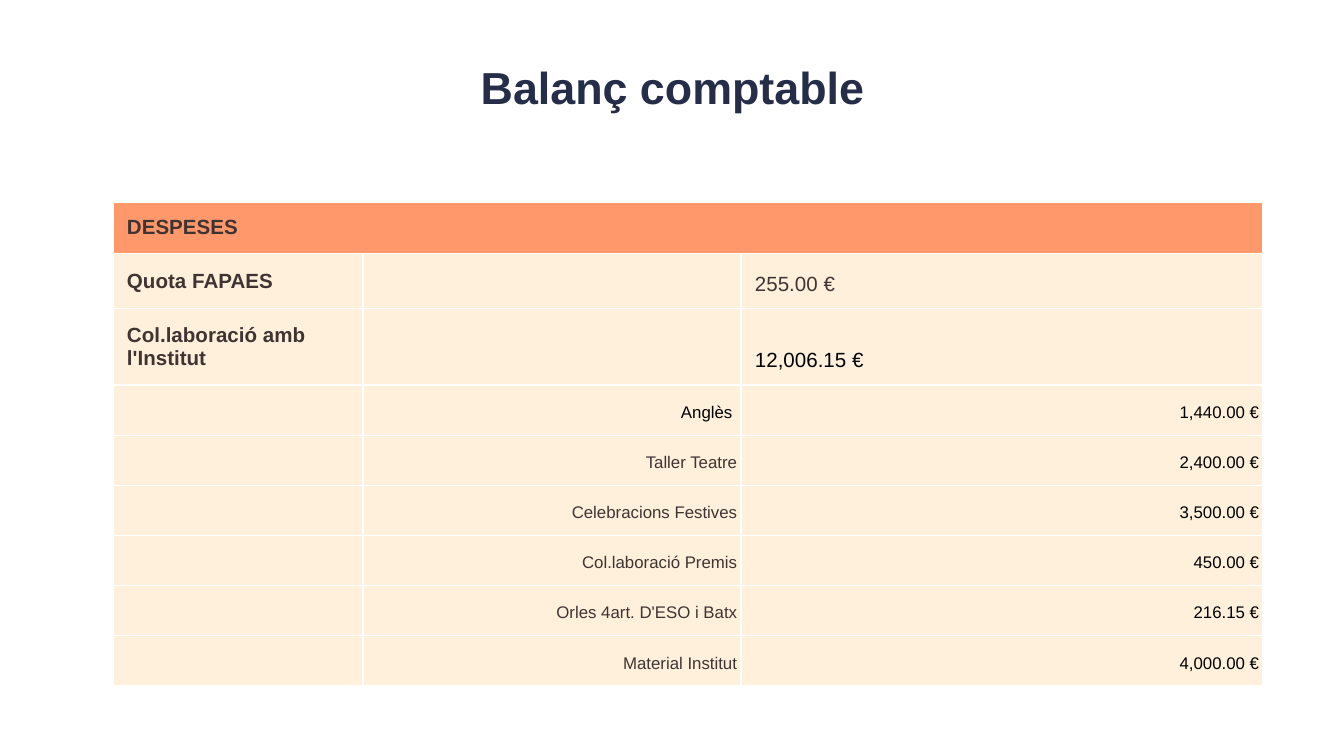
from lxml import etree
from pptx import Presentation
from pptx import util as u
from pptx.dml.color import RGBColor
from pptx.enum import text as t
from pptx.oxml import ns

PX = 914400 / 134.4
NAVY = RGBColor(0x25, 0x2D, 0x48)
BROWN = RGBColor(0x40, 0x34, 0x33)
BLACK = RGBColor(0, 0, 0)
CORAL = RGBColor(0xFF, 0x99, 0x6C)
CREAM = RGBColor(0xFF, 0xF0, 0xDB)
WHITE = RGBColor(0xFF, 0xFF, 0xFF)
LEFT, MID, RIGHT = t.PP_ALIGN.LEFT, t.PP_ALIGN.CENTER, t.PP_ALIGN.RIGHT
CENTRE, LOW = t.MSO_ANCHOR.MIDDLE, t.MSO_ANCHOR.BOTTOM


def px(n):
    return u.Emu(round(n * PX))


class Deck:
    """Holds the style and the current slide."""

    def __init__(self, wide, high, face):
        self.prs = Presentation()
        self.prs.slide_width, self.prs.slide_height = px(wide), px(high)
        self.face = face
        self.slide = self.prs.slides.add_slide(self.prs.slide_layouts[6])

    def label(self, para, words, size, color, bold=False, align=LEFT, gap=1.0):
        para.alignment, para.line_spacing = align, gap
        if not words:
            para._p.get_or_add_endParaRPr().set("sz", str(size * 100))
            return
        run = para.add_run()
        run.text = words
        style = {"name": self.face, "size": u.Pt(size), "bold": bold}
        for key, value in style.items():
            setattr(run.font, key, value)
        run.font.color.rgb = color

    def title(self, words, x, y, w, h):
        frame = self.slide.shapes.add_textbox(px(x), px(y), px(w), px(h)).text_frame
        frame.word_wrap = True
        for side in ("left", "right", "top", "bottom"):
            setattr(frame, "margin_" + side, u.Inches(0.1))
        self.label(frame.paragraphs[0], words, 24, NAVY, True, MID)

    def table(self, x, y, cols, rows):
        shape = self.slide.shapes.add_table(
            len(rows), len(cols), px(x), px(y), px(sum(cols)), px(sum(rows)))
        grid = shape.table
        grid.first_row = grid.horz_banding = False
        for col, wide in zip(grid.columns, cols):
            col.width = px(wide)
        for row, high in zip(grid.rows, rows):
            row.height = px(high)
        return grid

    def cell(self, cell, fill, words="", size=9, color=BROWN, anchor=CENTRE,
             indent=0, **style):
        form = {"margin_left": px(4), "margin_right": px(4),
                "margin_top": u.Inches(0.1), "margin_bottom": u.Inches(0.1),
                "vertical_anchor": anchor}
        for key, value in form.items():
            setattr(cell, key, value)
        self.edge(cell)
        cell.fill.solid()
        cell.fill.fore_color.rgb = fill
        para = cell.text_frame.paragraphs[0]
        self.label(para, words, size, color, **style)
        if indent:
            para._p.get_or_add_pPr().set("marL", str(px(indent)))

    def edge(self, cell):
        props = cell._tc.get_or_add_tcPr()
        for side in "LRTB":
            line = etree.SubElement(props, ns.qn("a:ln" + side), w=str(u.Pt(0.75)))
            fill = etree.SubElement(line, ns.qn("a:solidFill"))
            etree.SubElement(fill, ns.qn("a:srgbClr"), val=str(WHITE))


def main():
    deck = Deck(1344, 756, "Arial")
    deck.title("Balanç comptable", 27, 46, 1291, 85)
    totals = [("Quota FAPAES", "255.00 €", BROWN, 1.15),
              ("Col.laboració amb l'Institut", "12,006.15 €", BLACK, 1.0)]
    items = [("Anglès ", "1,440.00 €"), ("Taller Teatre", "2,400.00 €"),
             ("Celebracions Festives", "3,500.00 €"),
             ("Col.laboració Premis", "450.00 €"),
             ("Orles 4art. D'ESO i Batx", "216.15 €"),
             ("Material Institut", "4,000.00 €")]
    grid = deck.table(113, 202, [250, 378, 522], [49, 53, 72] + [50, 49] * 3)

    deck.cell(grid.cell(0, 0), CORAL, "DESPESES", 11, bold=True, indent=10)
    for col in (1, 2):
        deck.cell(grid.cell(0, col), CORAL)
    grid.cell(0, 0).merge(grid.cell(0, 2))

    for row, (name, cost, color, gap) in enumerate(totals, 1):
        deck.cell(grid.cell(row, 0), CREAM, name, 11, bold=True, indent=10)
        deck.cell(grid.cell(row, 1), CREAM)
        deck.cell(grid.cell(row, 2), CREAM, cost, 11, color, LOW, 10, gap=gap)

    for row, (name, cost) in enumerate(items, 3):
        first = row == 3
        deck.cell(grid.cell(row, 0), CREAM)
        deck.cell(grid.cell(row, 1), CREAM, name, 9, BLACK if first else BROWN,
                  LOW, 10, align=RIGHT, gap=1.0 if first else 1.15)
        deck.cell(grid.cell(row, 2), CREAM, cost, 9, BLACK, LOW,
                  align=RIGHT, gap=1.15)
    deck.prs.save("out.pptx")


if __name__ == "__main__":
    main()
